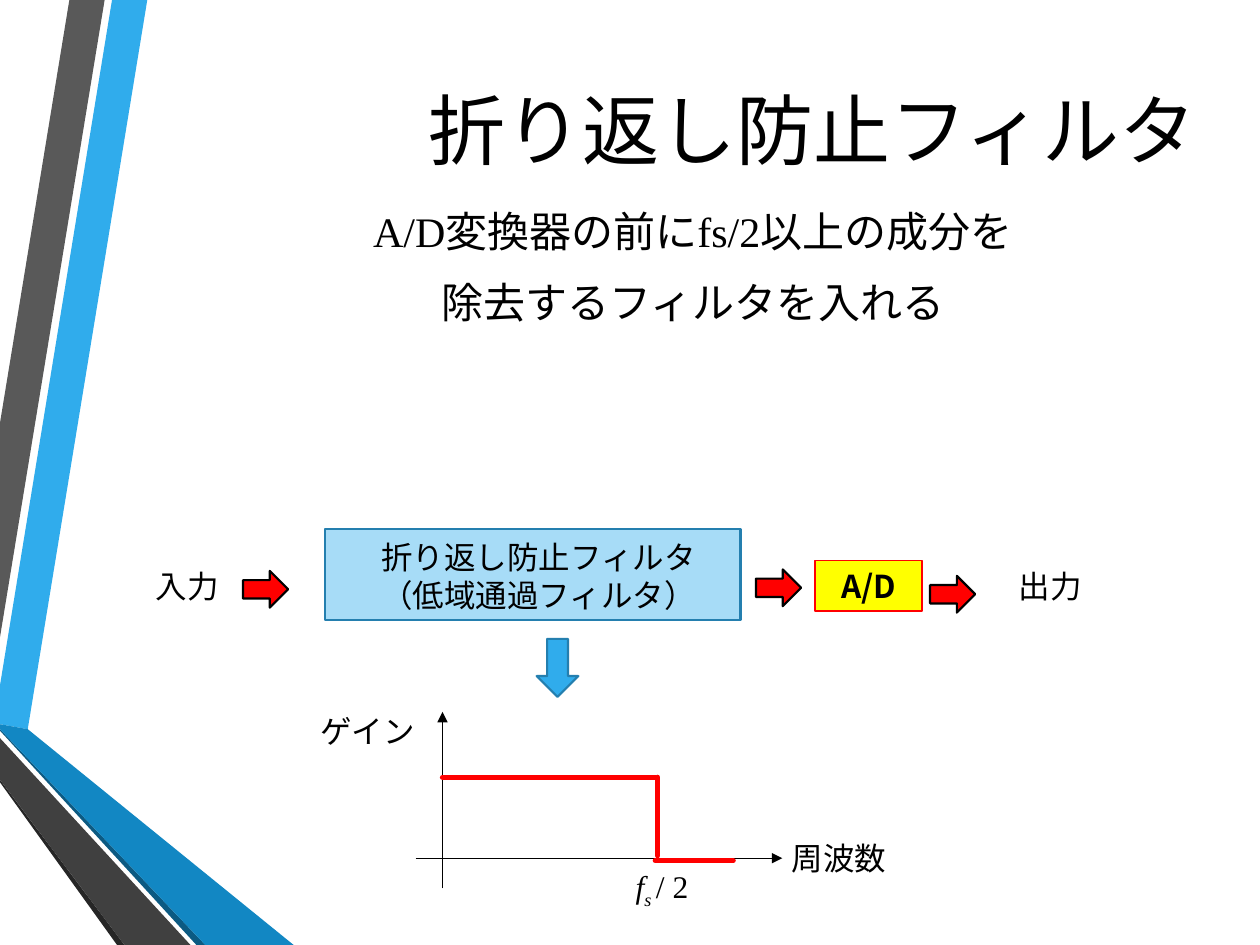
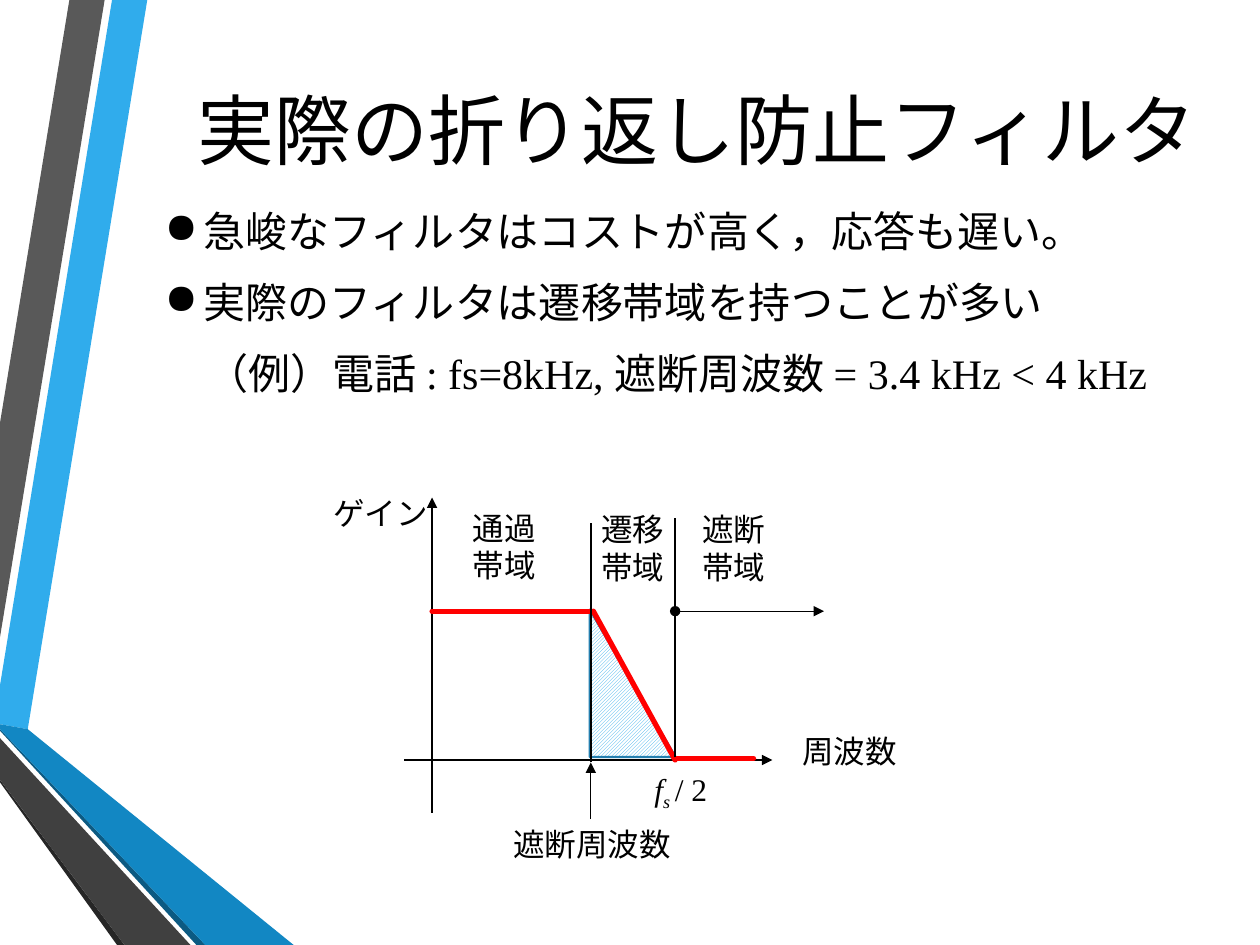
"""Builds two pages on ideal and practical anti-aliasing filters."""
from dataclasses import dataclass

import lxml.etree
import pptx
import pptx.dml.color
import pptx.enum.dml
import pptx.enum.lang
import pptx.enum.shapes
import pptx.enum.text
import pptx.oxml.ns
import pptx.util

RGBColor = pptx.dml.color.RGBColor
Cm = pptx.util.Cm
Pt = pptx.util.Pt
Shape = pptx.enum.shapes.MSO_SHAPE
Align = pptx.enum.text.PP_ALIGN
Anchor = pptx.enum.text.MSO_ANCHOR

BLACK = RGBColor(0x00, 0x00, 0x00)
WHITE = RGBColor(0xFF, 0xFF, 0xFF)
RED = RGBColor(0xFF, 0x00, 0x00)
YELLOW = RGBColor(0xFF, 0xFF, 0x00)
SKY = RGBColor(0x30, 0xAC, 0xEC)
PALE_SKY = RGBColor(0xA7, 0xDC, 0xF7)
STEEL = RGBColor(0x24, 0x7F, 0xAF)
BLUE = RGBColor(0x12, 0x87, 0xC3)
NAVY = RGBColor(0x0C, 0x5A, 0x82)
GREY = RGBColor(0x59, 0x59, 0x59)
DARK_GREY = RGBColor(0x40, 0x40, 0x40)
CHARCOAL = RGBColor(0x26, 0x26, 0x26)

TITLE_FONT = "Cabin"
BODY_FONT = "Times New Roman"
BOLD_FONT = "Noto Sans CJK JP"
LABEL_HEIGHT = 1.02
TWO_LINE_HEIGHT = 1.8


@dataclass(frozen=True)
class Span:
    """A run of text with its own style."""
    text: str
    size: float = 18
    font: str = BODY_FONT
    bold: bool = False
    italic: bool = False
    baseline: int = 0


@dataclass(frozen=True)
class Para:
    """A paragraph made of spans."""
    spans: tuple[Span, ...]
    align: Align = Align.CENTER
    spacing: float = 0
    bullet: bool = False


@dataclass(frozen=True)
class Label:
    """A text box, measured in centimetres."""
    left: float
    top: float
    width: float
    height: float
    paras: tuple[Para, ...]
    anchor: Anchor = Anchor.TOP


@dataclass(frozen=True)
class Block:
    """A preset shape, measured in centimetres."""
    kind: Shape
    left: float
    top: float
    width: float
    height: float
    fill: RGBColor
    line: RGBColor
    weight: float = 1.25
    paras: tuple[Para, ...] = ()
    hatched: bool = False


@dataclass(frozen=True)
class Stroke:
    """A straight line, measured in centimetres."""
    start: tuple[float, float]
    end: tuple[float, float]
    color: RGBColor = BLACK
    weight: float = 0.75
    head: str = ""
    tail: str = ""


@dataclass(frozen=True)
class Band:
    """A filled polygon of the page decoration."""
    color: RGBColor
    points: tuple[tuple[float, float], ...]


BANDS = (
    Band(SKY, ((0, 13.82), (0, 14.6), (0.56, 14.7), (2.97, 0), (2.26, 0))),
    Band(GREY, ((2.11, 0), (1.4, 0), (0, 8.53), (0, 12.85))),
    Band(CHARCOAL, ((0, 15.72), (0, 15.77), (2.36, 19.05), (2.51, 19.05))),
    Band(NAVY, ((0, 14.7), (0, 14.73), (3.96, 19.05), (4.14, 19.05))),
    Band(BLUE, ((0, 14.7), (4.14, 19.05), (5.92, 19.05), (0.56, 14.7), (0, 14.6))),
    Band(DARK_GREY, ((0, 15.72), (2.51, 19.05), (3.84, 19.05), (0, 14.88))),
)


def label(left: float, top: float, width: float, *lines: str) -> Label:
    """Describe a centred label with one paragraph a line."""
    height = LABEL_HEIGHT if len(lines) == 1 else TWO_LINE_HEIGHT
    return Label(left, top, width, height, tuple(Para((Span(line),)) for line in lines))


def half_rate(left: float, top: float) -> Label:
    """Describe the label of half the sampling frequency."""
    spans = (Span("f", italic=True), Span("s ", italic=True, baseline=-25000), Span("/ 2"))
    return Label(left, top, 2.77, LABEL_HEIGHT, (Para(spans),))


def heading(text: str) -> Label:
    """Describe the page title."""
    para = Para((Span(text, 44, TITLE_FONT),), Align.RIGHT)
    return Label(2.34, 1.17, 22.05, 2.84, (para,), Anchor.MIDDLE)


def body(*paras: Para) -> Label:
    """Describe the body text below the title."""
    return Label(3.07, 4.01, 21.79, 1.6, paras)


def body_line(text: str, align: Align = Align.LEFT, bullet: bool = False) -> Para:
    """Describe one paragraph of the body text."""
    return Para((Span(text, 24),), align, 6, bullet)


def red_arrow(left: float, top: float) -> Block:
    """Describe an arrow of the signal flow."""
    return Block(Shape.RIGHT_ARROW, left, top, 0.91, 0.74, RED, BLACK)


def axis(start: tuple[float, float], end: tuple[float, float]) -> Stroke:
    """Describe a thin line with an arrowhead."""
    return Stroke(start, end, tail="triangle")


def gain(start: tuple[float, float], end: tuple[float, float]) -> Stroke:
    """Describe a piece of the gain curve."""
    return Stroke(start, end, RED, 3)


def add_xml(parent, tag: str, **attributes: str):
    """Append a drawing element to its parent."""
    child = lxml.etree.SubElement(parent, pptx.oxml.ns.qn(tag))
    for key, value in attributes.items():
        child.set(key, value)
    return child


def write_paras(frame, paras: tuple[Para, ...]) -> None:
    """Write paragraphs run by run."""
    for index, item in enumerate(paras):
        para = frame.paragraphs[0] if index == 0 else frame.add_paragraph()
        para.alignment = item.align
        para.space_before = para.space_after = Pt(item.spacing)
        if item.bullet:
            properties = para._p.get_or_add_pPr()
            properties.set("marL", str(Cm(0.79)))
            properties.set("indent", str(Cm(-0.79)))
            add_xml(properties, "a:buChar", char="●")
        for part in item.spans:
            span = para.add_run()
            span.text = part.text
            span.font.size = Pt(part.size)
            span.font.bold = part.bold
            span.font.italic = part.italic
            span.font.name = part.font
            span.font.color.rgb = BLACK
            span.font.language_id = pptx.enum.lang.MSO_LANGUAGE_ID.JAPANESE
            properties = span._r.get_or_add_rPr()
            add_xml(properties, "a:ea", typeface=TITLE_FONT)
            if part.baseline:
                properties.set("baseline", str(part.baseline))


def draw_label(page, item: Label) -> None:
    """Draw a text box."""
    box = page.shapes.add_textbox(
        Cm(item.left), Cm(item.top), Cm(item.width), Cm(item.height))
    box.text_frame.word_wrap = True
    box.text_frame.vertical_anchor = item.anchor
    write_paras(box.text_frame, item.paras)


def draw_block(page, item: Block) -> None:
    """Draw a preset shape."""
    shape = page.shapes.add_shape(
        item.kind, Cm(item.left), Cm(item.top), Cm(item.width), Cm(item.height))
    shape.shadow.inherit = False
    if item.hatched:
        shape.fill.patterned()
        shape.fill.pattern = pptx.enum.dml.MSO_PATTERN.LIGHT_UPWARD_DIAGONAL
        shape.fill.fore_color.rgb = item.fill
        shape.fill.back_color.rgb = WHITE
    else:
        shape.fill.solid()
        shape.fill.fore_color.rgb = item.fill
    shape.line.color.rgb = item.line
    shape.line.width = Pt(item.weight)
    write_paras(shape.text_frame, item.paras)


def draw_stroke(page, item: Stroke) -> None:
    """Draw a line with its ends."""
    connector = page.shapes.add_connector(
        pptx.enum.shapes.MSO_CONNECTOR.STRAIGHT,
        *(Cm(value) for value in item.start + item.end))
    connector.line.color.rgb = item.color
    connector.line.width = Pt(item.weight)
    outline = connector.line._get_or_add_ln()
    if item.color == RED:
        outline.set("cap", "rnd")
    for tag, kind in (("a:headEnd", item.head), ("a:tailEnd", item.tail)):
        if kind:
            add_xml(outline, tag, type=kind)
    add_xml(connector._element.spPr, "a:effectLst")


def draw_band(page, item: Band) -> None:
    """Draw a polygon of the decoration."""
    first, *others = [(Cm(x), Cm(y)) for x, y in item.points]
    builder = page.shapes.build_freeform(*first)
    builder.add_line_segments(others, close=True)
    shape = builder.convert_to_shape()
    shape.shadow.inherit = False
    shape.fill.solid()
    shape.fill.fore_color.rgb = item.color
    shape.line.fill.background()


DRAWERS = {Label: draw_label, Block: draw_block, Stroke: draw_stroke, Band: draw_band}

IDEAL_FILTER = (
    Block(Shape.RECTANGLE, 6.55, 10.67, 8.38, 1.83, PALE_SKY, STEEL),
    heading("折り返し防止フィルタ"),
    body(body_line("A/D変換器の前にfs/2以上の成分を", Align.CENTER),
         body_line("除去するフィルタを入れる", Align.CENTER)),
    label(7.06, 10.72, 7.59, "折り返し防止フィルタ", "（低域通過フィルタ）"),
    Block(Shape.RECTANGLE, 16.43, 11.3, 2.16, 1.02, YELLOW, RED, 0.75,
          (Para((Span("A/D", font=BOLD_FONT, bold=True),)),)),
    red_arrow(15.24, 11.48),
    red_arrow(18.75, 11.61),
    label(19.79, 11.3, 2.77, "出力"),
    label(2.39, 11.3, 2.77, "入力"),
    red_arrow(4.9, 11.51),
    axis((8.38, 17.3), (15.77, 17.3)),
    axis((8.92, 17.91), (8.92, 14.35)),
    half_rate(11.96, 17.35),
    gain((13.26, 17.25), (13.26, 15.67)),
    label(15.24, 16.79, 3.35, "周波数"),
    gain((13.21, 17.35), (14.78, 17.35)),
    gain((8.92, 15.67), (13.21, 15.67)),
    label(5.74, 14.22, 3.35, "ゲイン"),
    Block(Shape.DOWN_ARROW, 10.82, 12.88, 0.84, 1.17, SKY, STEEL),
)

PRACTICAL_FILTER = (
    Block(Shape.RIGHT_TRIANGLE, 11.89, 12.29, 1.73, 2.97, SKY, STEEL, hatched=True),
    heading("実際の折り返し防止フィルタ"),
    body(body_line("急峻なフィルタはコストが高く，応答も遅い。", bullet=True),
         body_line("実際のフィルタは遷移帯域を持つことが多い", bullet=True),
         body_line("　（例）電話 : fs=8kHz, 遮断周波数 = 3.4 kHz < 4 kHz")),
    axis((8.15, 15.32), (15.57, 15.32)),
    axis((8.71, 16.38), (8.71, 10.03)),
    half_rate(12.34, 15.39),
    gain((13.61, 15.32), (11.96, 12.32)),
    label(15.04, 14.63, 4.17, "周波数"),
    gain((13.61, 15.29), (15.19, 15.29)),
    gain((8.71, 12.32), (11.96, 12.32)),
    label(5.51, 9.83, 4.34, "ゲイン"),
    Stroke((13.61, 15.27), (13.61, 10.44), weight=1),
    Stroke((11.91, 15.37), (11.91, 10.54), weight=1),
    label(9.86, 16.51, 4.14, "遮断周波数"),
    axis((11.91, 16.51), (11.91, 15.37)),
    label(8, 10.13, 4.34, "通過", "帯域"),
    label(10.59, 10.16, 4.34, "遷移", "帯域"),
    label(12.62, 10.16, 4.34, "遮断", "帯域"),
    Stroke((13.61, 12.32), (16.61, 12.32), head="oval", tail="triangle"),
)


def main() -> None:
    """Build and save the deck."""
    deck = pptx.Presentation()
    deck.slide_width, deck.slide_height = Cm(25.4), Cm(19.05)
    for content in (IDEAL_FILTER, PRACTICAL_FILTER):
        page = deck.slides.add_slide(deck.slide_layouts[6])
        for item in BANDS + content:
            DRAWERS[type(item)](page, item)
    deck.save("out.pptx")


if __name__ == "__main__":
    main()
